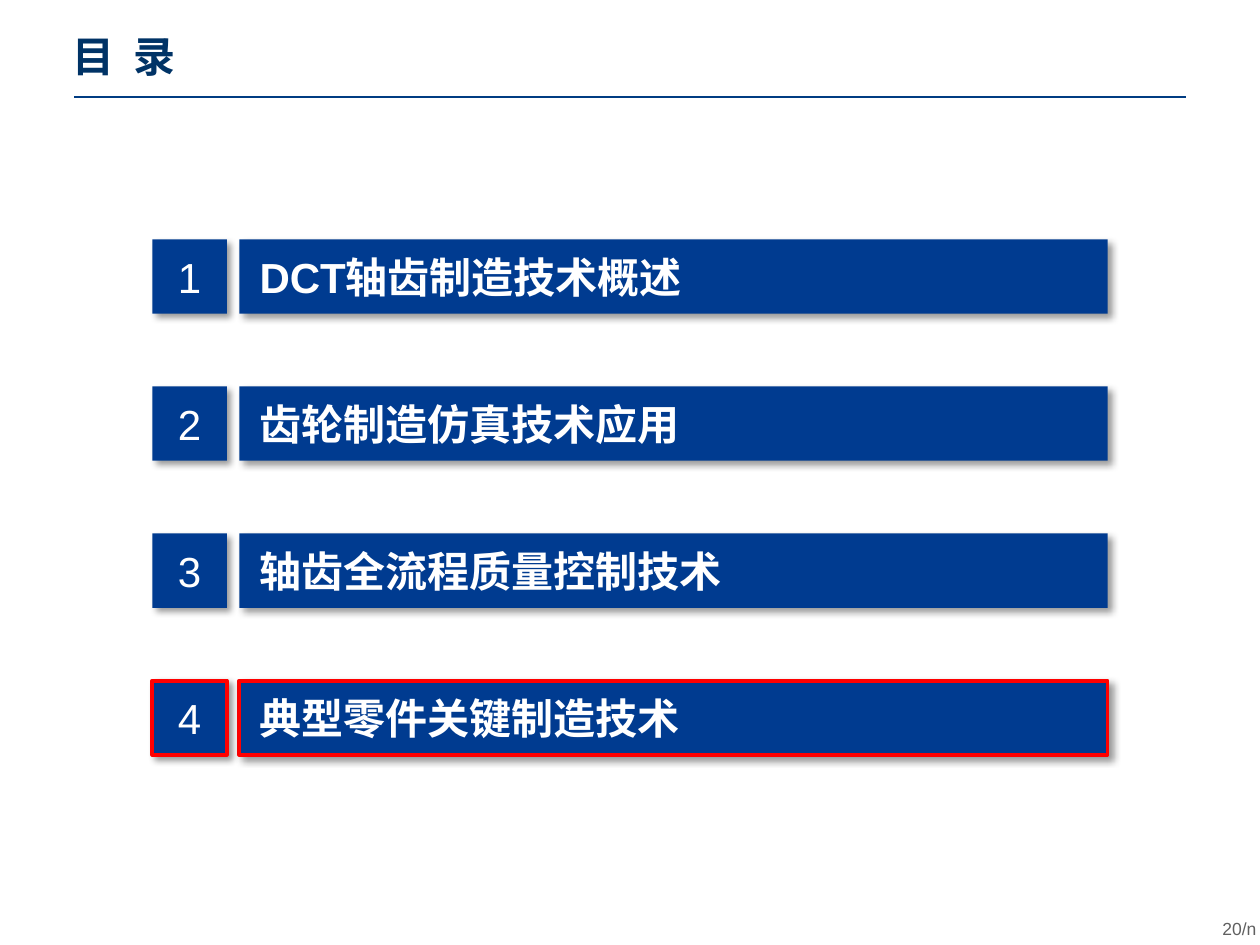
import pptx
import pptx.dml.color
import pptx.enum.shapes
import pptx.enum.text
import pptx.oxml
import pptx.oxml.ns
import pptx.util

Inches = pptx.util.Inches
Pt = pptx.util.Pt
ALIGN = pptx.enum.text.PP_ALIGN
ANCHOR = pptx.enum.text.MSO_ANCHOR
CJK = "Noto Sans CJK SC"
TOPICS = ["DCT轴齿制造技术概述", "齿轮制造仿真技术应用",
          "轴齿全流程质量控制技术", "典型零件关键制造技术"]
ACTIVE = 4
TOP, STEP, SIDE = 1.9, 1.167, 0.59
SHADOW = ('<a:outerShdw %s blurRad="50800" dist="38100" dir="2700000" '
          'algn="tl" rotWithShape="0"><a:srgbClr val="000000">'
          '<a:alpha val="40000"/></a:srgbClr></a:outerShdw>'
          % pptx.oxml.ns.nsdecls("a"))


def color(code):
    return pptx.dml.color.RGBColor.from_string(code)


def apply(target, values):
    for name, value in values.items():
        setattr(target, name, value)


def write(frame, text, tint, font, align=ALIGN.LEFT, gap=None):
    para = frame.paragraphs[0]
    para.alignment = align
    run = para.add_run()
    run.text = text
    apply(run.font, font)
    run.font.color.rgb = color(tint)
    props = run.font._element
    east = pptx.oxml.parse_xml(
        '<a:ea %s typeface="%s"/>' % (pptx.oxml.ns.nsdecls("a"), CJK))
    props.append(east)
    if gap:
        props.set("spc", str(gap))


def add_text(slide, area, text, tint, font, wrap, **style):
    frame = slide.shapes.add_textbox(*map(Inches, area)).text_frame
    frame.word_wrap = wrap
    write(frame, text, tint, font, **style)


def add_rule(slide, left, right, top):
    rule = slide.shapes.add_connector(
        pptx.enum.shapes.MSO_CONNECTOR.STRAIGHT,
        Inches(left), Inches(top), Inches(right), Inches(top))
    rule.line.color.rgb = color("003C82")
    rule.line.width = Pt(1.5)
    props = rule._element.spPr
    props.append(pptx.oxml.parse_xml(
        "<a:effectLst %s/>" % pptx.oxml.ns.nsdecls("a")))


def add_block(group, area, text, active, inset, bold, align):
    block = group.shapes.add_shape(
        pptx.enum.shapes.MSO_SHAPE.RECTANGLE, *map(Inches, area))
    block.fill.solid()
    block.fill.fore_color.rgb = color("003B90")
    if active:
        block.line.color.rgb = color("FF0000")
        block.line.width = Pt(2.25)
    else:
        block.line.fill.background()
    block.shadow.inherit = False
    effects = block._element.spPr.find(pptx.oxml.ns.qn("a:effectLst"))
    effects.append(pptx.oxml.parse_xml(SHADOW))
    apply(block.text_frame, {
        "margin_left": Inches(inset), "margin_right": 0, "margin_top": 0,
        "margin_bottom": 0, "word_wrap": True,
        "vertical_anchor": ANCHOR.MIDDLE})
    font = {"name": "Arial", "size": Pt(24), "bold": bold}
    write(block.text_frame, text, "FFFFFF", font, align)


def add_topic(slide, number, text):
    group = slide.shapes.add_group_shape()
    top = TOP + (number - 1) * STEP
    active = number == ACTIVE
    add_block(group, (1.9, top, 6.89, SIDE), text, active,
              0.16, True, ALIGN.LEFT)
    add_block(group, (1.21, top, SIDE, SIDE), str(number), active,
              0, False, ALIGN.CENTER)


def main():
    deck = pptx.Presentation()
    apply(deck, {"slide_width": Inches(10), "slide_height": Inches(7.5)})
    slide = deck.slides.add_slide(deck.slide_layouts[6])
    add_rule(slide, 0.59, 9.41, 0.77)
    add_text(slide, (9.56, 7.24, 0.51, 0.24), "20/n", "606060",
             {"name": "Arial", "size": Pt(10)}, True, align=ALIGN.RIGHT)
    add_text(slide, (0.48, 0.19, 1.07, 0.5), "目 录", "003366",
             {"name": CJK, "size": Pt(24), "bold": True}, False, gap=270)
    for number, text in enumerate(TOPICS, 1):
        add_topic(slide, number, text)
    deck.save("out.pptx")


if __name__ == "__main__":
    main()
